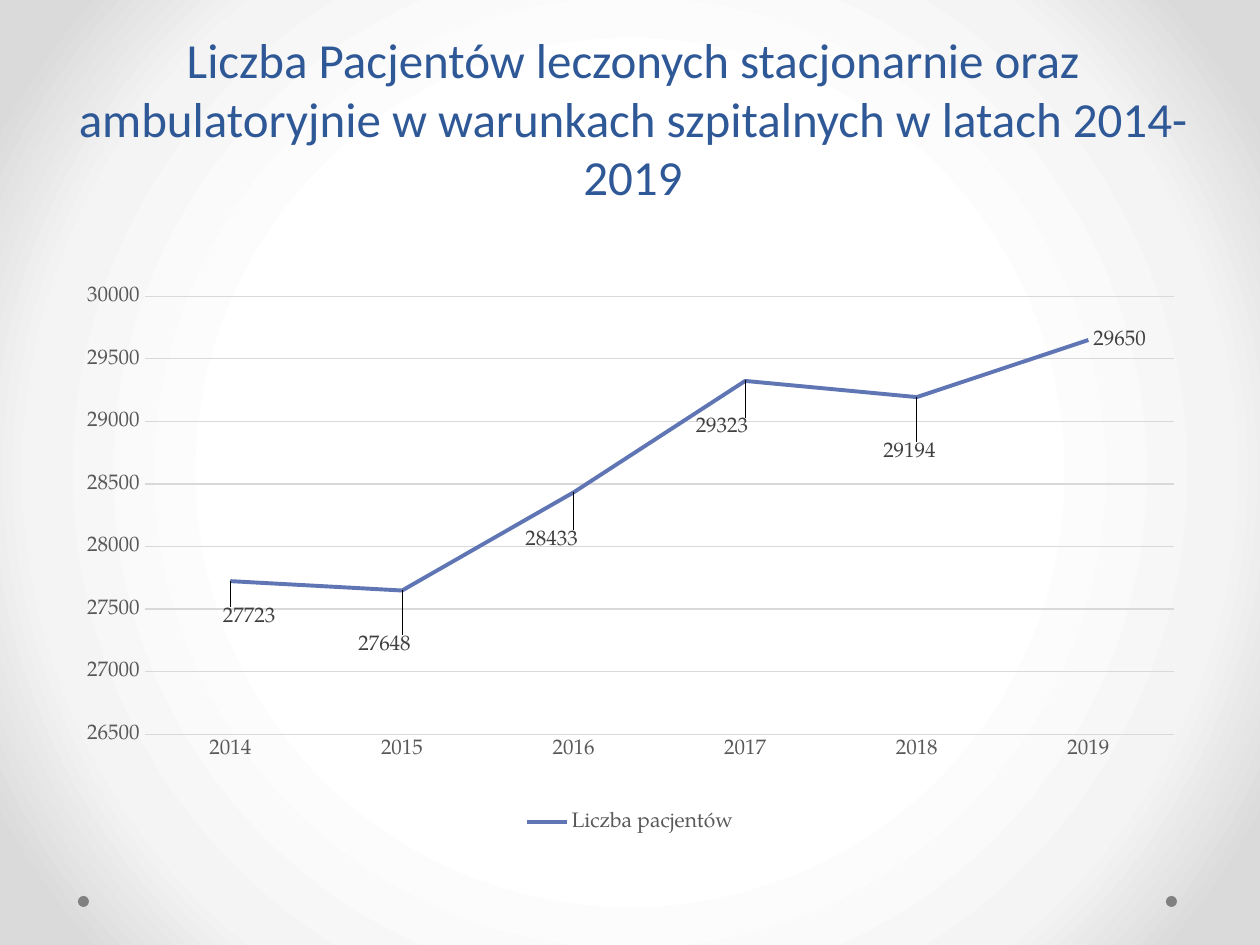
from dataclasses import dataclass

from pptx import Presentation
from pptx import util as u
from pptx.chart.data import CategoryChartData
from pptx.dml.color import RGBColor
from pptx.enum import chart as ch, shapes, text
from pptx.oxml import parse_xml
from pptx.oxml.ns import nsdecls

SCALE = 914400 / 126  # EMU per px


@dataclass(frozen=True)
class Theme:
    head: str = "Calibri"
    body: str = "TeX Gyre Pagella"
    title: str = "2F5897"
    line: str = "6076B4"
    axis: str = "595959"
    label: str = "404040"
    grid: str = "D9D9D9"
    dot: str = "808080"
    glow: tuple = ((50, "FFFFFF"), (76, "F4F4F4"), (92, "DADADA"))
    big: int = 28
    small: int = 12


T = Theme()
YEARS = ["2014", "2015", "2016", "2017", "2018", "2019"]
COUNTS = [27723, 27648, 28433, 29323, 29194, 29650]
# Label shifts in px from the place right of each point; the last stays put
SHIFTS = [(-12, 36), (-49, 55), (-53, 48), (-54, 47), (-39, 55)]
PLOT = (0.072, 0.132, 0.908, 0.702)


def px(n):
    return u.Emu(round(n * SCALE))


def rgb(code):
    return RGBColor.from_string(code)


def style(font, name, size, color):
    font.name, font.size, font.bold = name, u.Pt(size), False
    font.color.rgb = rgb(color)


def stroke(line, color, width):
    line.color.rgb = rgb(color)
    line.width = u.Pt(width)


def layout(x, y, w=None, h=None):
    """Manual chart layout: an offset, or an inner plot box with a size."""
    parts = []
    if w is not None:
        parts += [("layoutTarget", "inner"), ("xMode", "edge"), ("yMode", "edge")]
    parts += [("x", x), ("y", y)]
    if w is not None:
        parts += [("w", w), ("h", h)]
    body = "".join(f'<c:{tag} val="{val}"/>' for tag, val in parts)
    return parse_xml(f'<c:layout {nsdecls("c")}><c:manualLayout>{body}'
                     '</c:manualLayout></c:layout>')


def backdrop(slide):
    """Round grey glow behind the slide."""
    fill = slide.background.fill
    fill.gradient()
    old = slide.element.xpath("p:cSld/p:bg/p:bgPr/a:gradFill")[0]
    stops = "".join(f'<a:gs pos="{pos * 1000}"><a:srgbClr val="{code}"/></a:gs>'
                    for pos, code in T.glow)
    new = parse_xml(
        f'<a:gradFill {nsdecls("a")} rotWithShape="1"><a:gsLst>{stops}</a:gsLst>'
        '<a:path path="circle"><a:fillToRect l="50000" t="50000" r="50000" '
        'b="50000"/></a:path></a:gradFill>')
    old.getparent().replace(old, new)


def dots(slide, x, y, w, h):
    """A dot at each end of the foot strip."""
    for left in (x, x + w - h):
        dot = slide.shapes.add_shape(shapes.MSO_SHAPE.OVAL,
                                     px(left), px(y), px(h), px(h))
        dot.shadow.inherit = False
        dot.fill.solid()
        dot.fill.fore_color.rgb = rgb(T.dot)
        dot.line.fill.background()


def header(slide, x, y, w, h):
    title = slide.shapes.title
    title.left, title.top, title.width, title.height = map(px, (x, y, w, h))
    frame = title.text_frame
    frame.word_wrap = True
    frame.auto_size = text.MSO_AUTO_SIZE.NONE
    frame.vertical_anchor = text.MSO_ANCHOR.MIDDLE
    para = frame.paragraphs[0]
    para.alignment = text.PP_ALIGN.CENTER
    run = para.add_run()
    run.text = ("Liczba Pacjentów leczonych stacjonarnie oraz ambulatoryjnie "
                "w warunkach szpitalnych w latach 2014-2019")
    style(run.font, T.head, T.big, T.title)


def axes(chart):
    cat, val = chart.category_axis, chart.value_axis
    for axis in (cat, val):
        axis.major_tick_mark = axis.minor_tick_mark = ch.XL_TICK_MARK.NONE
        style(axis.tick_labels.font, T.body, T.small, T.axis)
    stroke(cat.format.line, T.grid, 0.75)
    val.minimum_scale, val.maximum_scale, val.major_unit = 26500, 30000, 500
    val.format.line.fill.background()
    val.has_major_gridlines = True
    stroke(val.major_gridlines.format.line, T.grid, 0.75)


def labels(series, w, h):
    tags = series.data_labels
    tags.show_value = True
    tags.position = ch.XL_LABEL_POSITION.RIGHT
    style(tags.font, T.body, T.small, T.label)
    for i, (dx, dy) in enumerate(SHIFTS):
        tag = series.points[i].data_label
        style(tag.font, T.body, T.small, T.label)
        tag.position = ch.XL_LABEL_POSITION.RIGHT
        node = series._element.xpath("c:dLbls/c:dLbl")[i]
        node[0].addnext(layout(round(dx / w, 3), round(dy / h, 3)))


def graph(slide, x, y, w, h):
    data = CategoryChartData()
    data.categories = YEARS
    data.add_series("Liczba pacjentów", COUNTS)
    chart = slide.shapes.add_chart(ch.XL_CHART_TYPE.LINE, px(x), px(y),
                                   px(w), px(h), data).chart
    style(chart.font, T.body, 10, "000000")
    chart.has_title = False
    axes(chart)

    # Plot box
    area = chart._chartSpace.xpath("c:chart/c:plotArea")[0]
    for old in area.xpath("c:layout"):
        area.remove(old)
    area.insert(0, layout(*PLOT))

    # Patient line
    chart.plots[0].vary_by_categories = False
    series = chart.plots[0].series[0]
    series.smooth = False
    series.marker.style = ch.XL_MARKER_STYLE.NONE
    stroke(series.format.line, T.line, 2.25)
    labels(series, w, h)

    # Legend
    chart.has_legend = True
    chart.legend.position = ch.XL_LEGEND_POSITION.BOTTOM
    chart.legend.include_in_layout = False
    style(chart.legend.font, T.body, T.small, T.axis)


def main():
    deck = Presentation()
    deck.slide_width, deck.slide_height = px(1260), px(945)
    slide = deck.slides.add_slide(deck.slide_layouts[5])
    backdrop(slide)
    dots(slide, 78, 896, 1099, 11)
    header(slide, 66, 55, 1134, 125)
    graph(slide, 63, 214, 1134, 624)
    deck.save("out.pptx")


if __name__ == "__main__":
    main()
